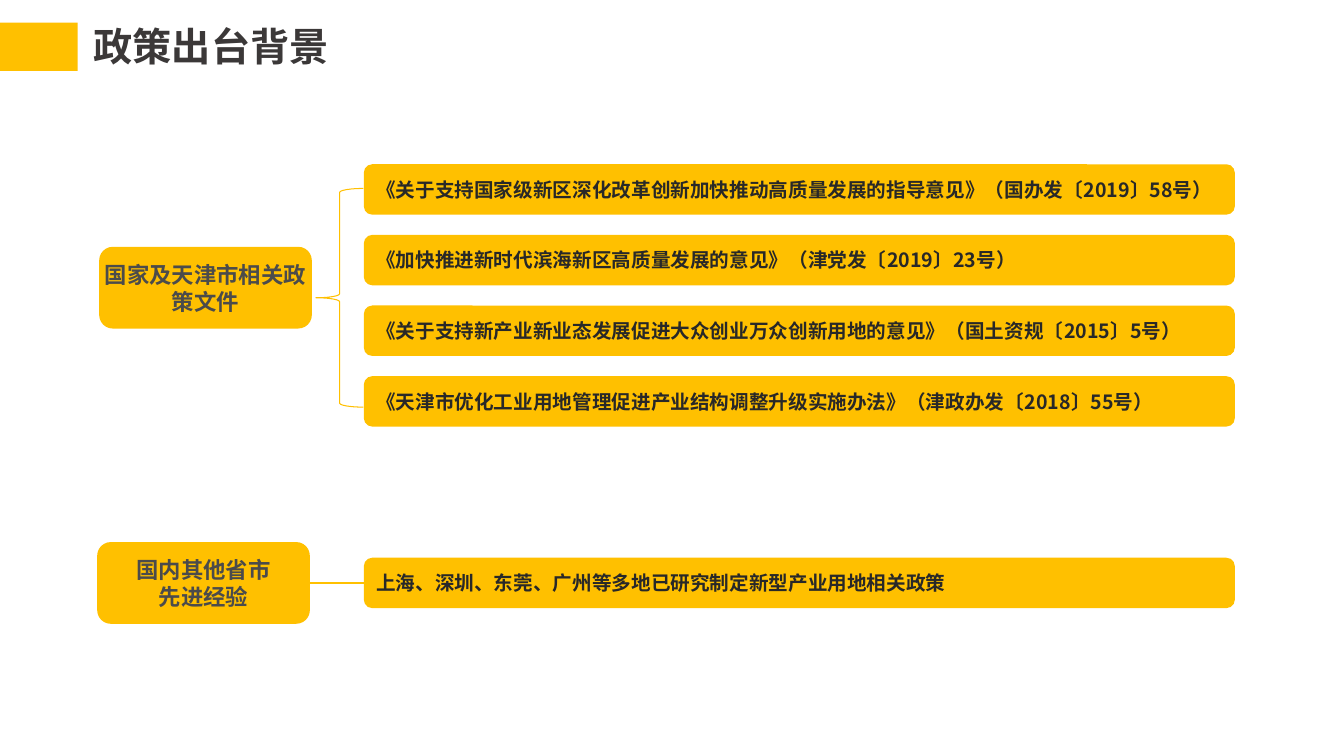
import pptx
import pptx.util
import pptx.dml.color
import pptx.enum.shapes
import pptx.enum.text
import pptx.oxml
import pptx.oxml.ns

Cm = pptx.util.Cm
Pt = pptx.util.Pt
SHAPE = pptx.enum.shapes.MSO_SHAPE
ALIGN = pptx.enum.text.PP_ALIGN
ANCHOR = pptx.enum.text.MSO_ANCHOR

TITLE = "政策出台背景"
POLICY_LABEL = ["国家及天津市相关政策文件"]
POLICIES = [
    "《关于支持国家级新区深化改革创新加快推动高质量发展的指导意见》（国办发〔2019〕58号）",
    "《加快推进新时代滨海新区高质量发展的意见》（津党发〔2019〕23号）",
    "《关于支持新产业新业态发展促进大众创业万众创新用地的意见》（国土资规〔2015〕5号）",
    "《天津市优化工业用地管理促进产业结构调整升级实施办法》（津政办发〔2018〕55号）",
]
EXPERIENCE_LABEL = ["国内其他省市", "先进经验"]
EXPERIENCE = "上海、深圳、东莞、广州等多地已研究制定新型产业用地相关政策"

THEME = {
    "font": "Noto Sans CJK SC",
    "accent": "FFC000",
    "title": (28, "3B3838"),
    "label": (16, "4B4B4B"),
    "bar": (14, "282828"),
}

BAR_LEFT, BAR_W, BAR_H = 9.17, 21.95, 1.27
BAR_TOP, BAR_PITCH = 4.14, 1.78
LABEL_W, LABEL_H = 5.36, 2.06
POLICY_MID, EXPERIENCE_MID = 7.25, 14.69


def rgb(value):
    return pptx.dml.color.RGBColor.from_string(value)


def write(sp, lines, style, align=ALIGN.LEFT, anchor=ANCHOR.MIDDLE):
    size, color = THEME[style]
    tf = sp.text_frame
    tf.word_wrap = True
    tf.vertical_anchor = anchor
    for i, line in enumerate(lines):
        p = tf.add_paragraph() if i else tf.paragraphs[0]
        p.alignment = align
        r = p.add_run()
        r.text = line
        r.font.size = Pt(size)
        r.font.bold = True
        r.font.name = THEME["font"]
        r.font.color.rgb = rgb(color)
        ea = pptx.oxml.parse_xml(f'<a:ea {pptx.oxml.ns.nsdecls("a")} typeface="{THEME["font"]}"/>')
        r.font._element.append(ea)


def add_block(s, kind, left, top, width, height):
    sp = s.shapes.add_shape(kind, Cm(left), Cm(top), Cm(width), Cm(height))
    sp.shadow.inherit = False
    sp.fill.solid()
    sp.fill.fore_color.rgb = rgb(THEME["accent"])
    sp.line.fill.background()
    return sp


def add_bar(s, top, text):
    sp = add_block(s, SHAPE.ROUNDED_RECTANGLE, BAR_LEFT, top, BAR_W, BAR_H)
    write(sp, [text], "bar")
    return sp


def add_label(s, left, mid, lines):
    sp = add_block(s, SHAPE.ROUNDED_RECTANGLE, left, mid - LABEL_H / 2, LABEL_W, LABEL_H)
    sp.text_frame.margin_left = sp.text_frame.margin_right = 0
    write(sp, lines, "label", ALIGN.CENTER)
    return sp


def add_brace(s):
    sp = s.shapes.add_shape(SHAPE.LEFT_BRACE, Cm(7.96), Cm(4.75), Cm(1.2), Cm(5.51))
    sp.shadow.inherit = False
    sp.fill.background()
    sp.line.color.rgb = rgb(THEME["accent"])
    sp.line.width = Pt(0.75)


def add_link(s, start, end):
    cx = s.shapes.add_connector(pptx.enum.shapes.MSO_CONNECTOR.STRAIGHT, 0, 0, 0, 0)
    cx.begin_connect(start, 3)
    cx.end_connect(end, 1)
    cx.line.color.rgb = rgb(THEME["accent"])
    cx.line.width = Pt(1.5)
    effects = pptx.oxml.parse_xml(f'<a:effectLst {pptx.oxml.ns.nsdecls("a")}/>')
    cx._element.spPr.append(effects)


def main():
    prs = pptx.Presentation()
    prs.slide_width, prs.slide_height = Cm(33.87), Cm(19.05)
    s = prs.slides.add_slide(prs.slide_layouts[6])

    title = s.shapes.add_textbox(Cm(2.11), Cm(0.43), Cm(16.2), Cm(1.47))
    write(title, [TITLE], "title", anchor=ANCHOR.TOP)
    add_block(s, SHAPE.RECTANGLE, 0, 0.57, 1.96, 1.22)

    add_label(s, 2.5, POLICY_MID, POLICY_LABEL)
    for i, policy in enumerate(POLICIES):
        add_bar(s, BAR_TOP + i * BAR_PITCH, policy)
    add_brace(s)

    label = add_label(s, 2.45, EXPERIENCE_MID, EXPERIENCE_LABEL)
    bar = add_bar(s, EXPERIENCE_MID - BAR_H / 2, EXPERIENCE)
    add_link(s, label, bar)

    prs.save("out.pptx")


if __name__ == "__main__":
    main()
